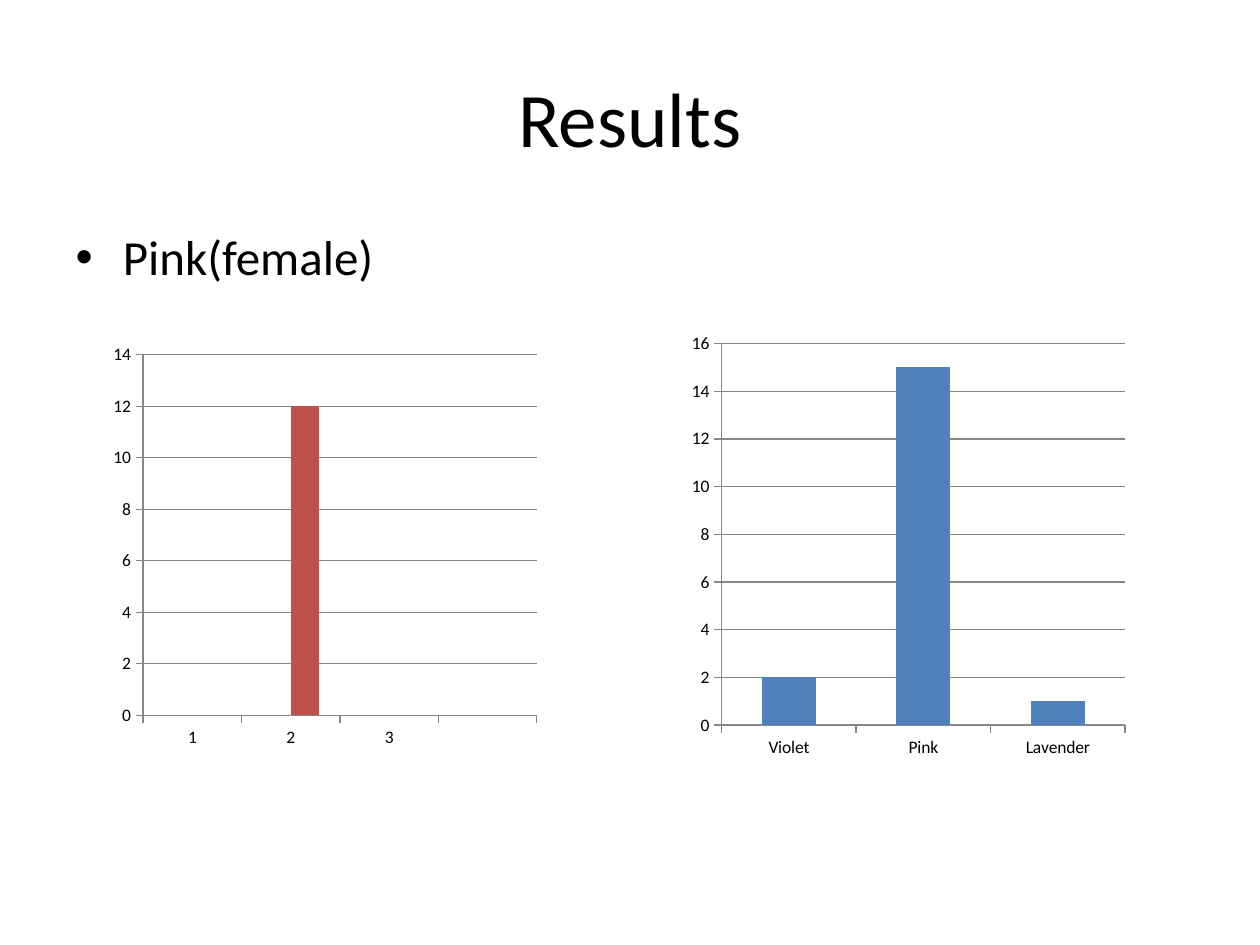
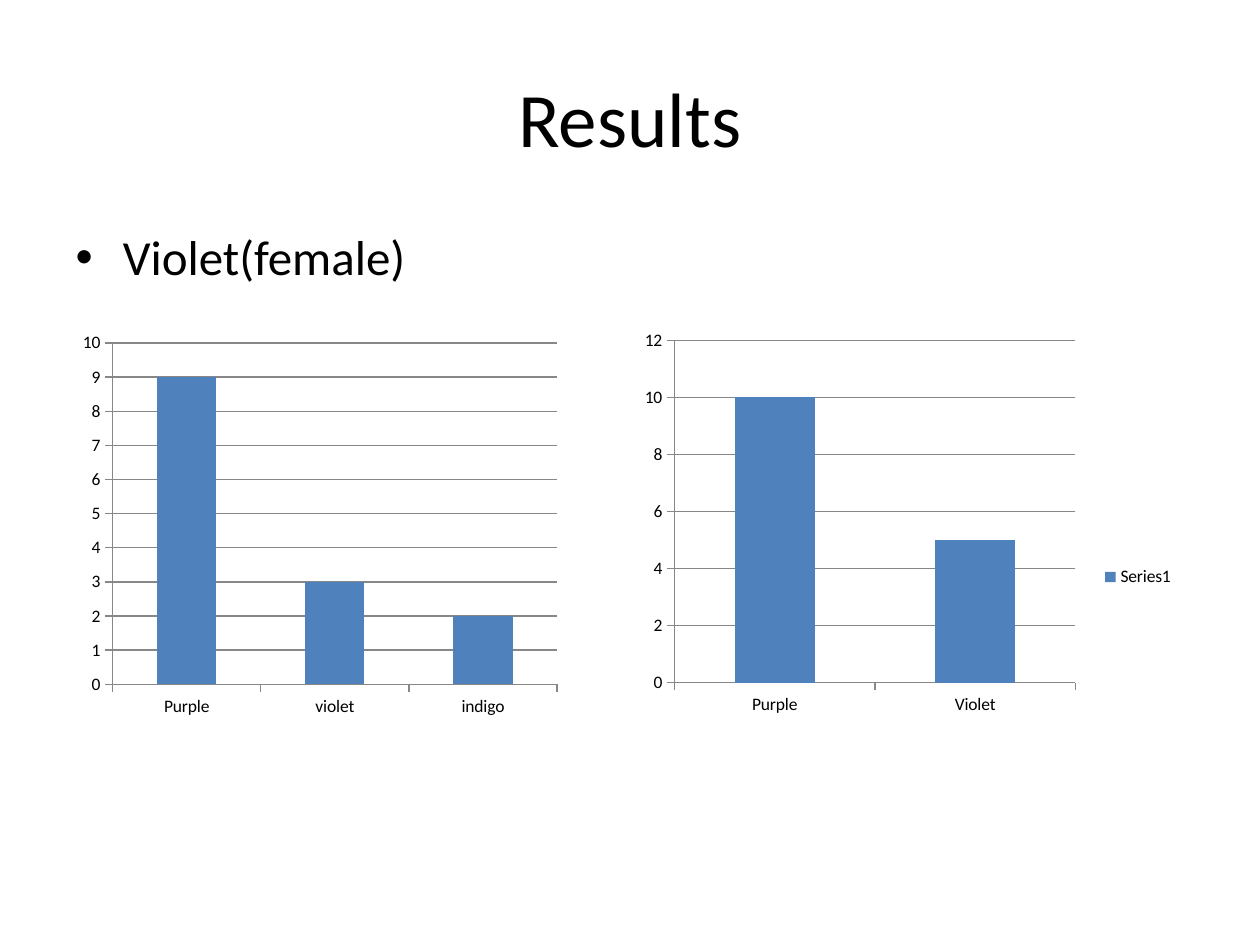
from dataclasses import dataclass

import pptx
import pptx.chart.data
import pptx.dml.color
import pptx.enum.chart
import pptx.enum.text
import pptx.util
from lxml import etree
from pptx.util import Inches

RGB = pptx.dml.color.RGBColor.from_string


@dataclass(frozen=True)
class Theme:
    font: str = "Calibri"
    text: str = "000000"
    axis: str = "878787"
    bars: tuple = ("4F81BD", "C0504D")
    title_size: int = 44
    body_size: int = 28
    chart_size: int = 10


THEME = Theme()


def style_font(font, size):
    font.name = THEME.font
    font.size = pptx.util.Pt(size)
    font.color.rgb = RGB(THEME.text)


def fill_placeholder(sp, text, box, size):
    sp.left, sp.top, sp.width, sp.height = map(Inches, box)
    tf = sp.text_frame
    tf.text = text
    p = tf.paragraphs[0]
    style_font(p.font, size)
    return p


def add_results_slide(prs, group):
    s = prs.slides.add_slide(prs.slide_layouts[1])
    p = fill_placeholder(s.shapes.title, "Results", (0.5, 0.3, 9, 1.25), THEME.title_size)
    p.alignment = pptx.enum.text.PP_ALIGN.CENTER
    fill_placeholder(s.placeholders[1], group, (0.5, 1.75, 4.42, 4.95), THEME.body_size)
    return s


def style_axis(axis):
    axis.major_tick_mark = pptx.enum.chart.XL_TICK_MARK.OUTSIDE
    axis.minor_tick_mark = pptx.enum.chart.XL_TICK_MARK.NONE
    axis.format.line.color.rgb = RGB(THEME.axis)
    axis.format.line.width = pptx.util.Pt(0.75)


def add_column_chart(s, box, categories, series):
    data = pptx.chart.data.CategoryChartData()
    data.categories = categories
    for name, values in series.items():
        data.add_series(name, values)
    kind = pptx.enum.chart.XL_CHART_TYPE.COLUMN_CLUSTERED
    chart = s.shapes.add_chart(kind, *map(Inches, box), data).chart
    style_font(chart.font, THEME.chart_size)
    chart.has_title = False
    chart.has_legend = False
    style_axis(chart.category_axis)
    style_axis(chart.value_axis)
    chart.value_axis.has_major_gridlines = True
    grid = chart.value_axis.major_gridlines.format.line
    grid.color.rgb = RGB(THEME.axis)
    grid.width = pptx.util.Pt(0.75)
    plot = chart.plots[0]
    plot.gap_width = 150
    plot.vary_by_categories = False
    for bar, color in zip(plot.series, THEME.bars):
        bar.invert_if_negative = False
        bar.format.fill.solid()
        bar.format.fill.fore_color.rgb = RGB(color)
    return chart


def add_right_legend(chart):
    chart.has_legend = True
    chart.legend.position = pptx.enum.chart.XL_LEGEND_POSITION.RIGHT
    chart.legend.include_in_layout = False


def place_plot(chart, x, y, w, h):
    qn = pptx.oxml.ns.qn
    area = chart.plots[0]._element.getparent()
    for old in area.findall(qn("c:layout")):
        area.remove(old)
    layout = etree.Element(qn("c:layout"))
    manual = etree.SubElement(layout, qn("c:manualLayout"))
    settings = dict(layoutTarget="inner", xMode="edge", yMode="edge", x=x, y=y, w=w, h=h)
    for tag, value in settings.items():
        etree.SubElement(manual, qn(f"c:{tag}")).set("val", str(value))
    area.insert(0, layout)


def main():
    prs = pptx.Presentation()
    prs.slide_width, prs.slide_height = Inches(10), Inches(7.5)

    s = add_results_slide(prs, "Pink(female)")
    add_column_chart(s, (5.42, 2.58, 3.58, 3.5), ("Violet", "Pink", "Lavender"),
                     {"Series 1": (2, 15, 1)})
    add_column_chart(s, (0.83, 2.67, 3.5, 3.33), ("1", "2", "3", ""),
                     {"Series 1": (0, 0, 0, None), "Series 2": (0, 12, 0, None)})

    s = add_results_slide(prs, "Violet(female)")
    add_column_chart(s, (0.58, 2.58, 3.92, 3.17), ("Purple", "violet", "indigo"),
                     {"Series 1": (9, 3, 2)})
    chart = add_column_chart(s, (5, 2.58, 4.42, 4), ("Purple", "Violet"),
                             {"Series1": (10, 5)})
    add_right_legend(chart)
    place_plot(chart, 0.08, 0.03, 0.72, 0.68)

    prs.save("out.pptx")


if __name__ == "__main__":
    main()
